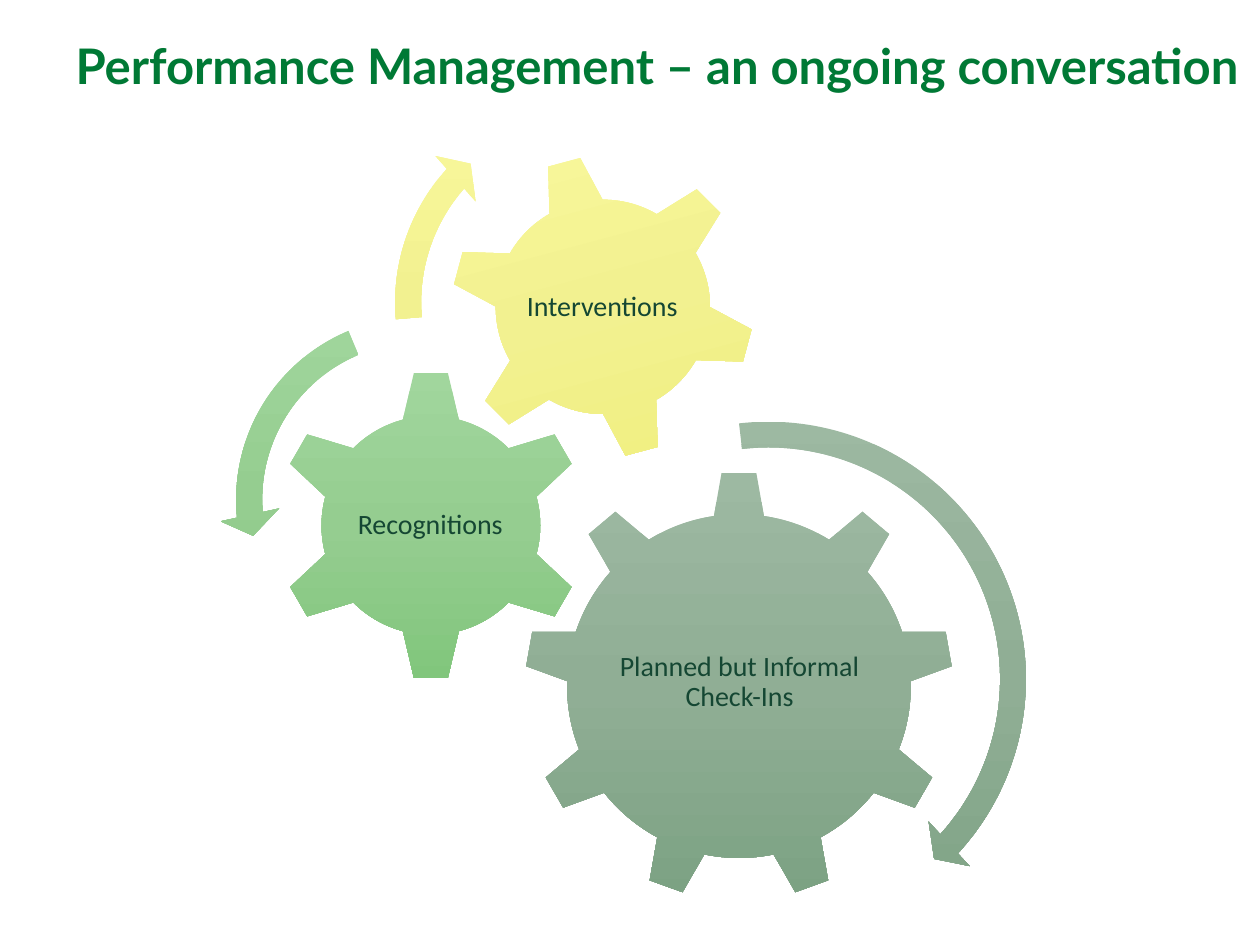
from copy import deepcopy

from pptx import Presentation
from pptx.dml.color import RGBColor
from pptx.enum import shapes, text
from pptx.util import Inches, Pt

G = shapes.MSO_SHAPE

# Content: gear square (left, top, side), label box (left, top, width, height),
# arrow square, arrow shape in percent (shaft, head) and degrees (head, end, start)
TITLE = "Performance Management – an ongoing conversation"
GEARS = [
    dict(label="Planned but Informal Check-Ins", tone="sage",
         kind=G.GEAR_9, gear=(4.16, 3.74, 3.41), turn=0,
         box=(4.85, 4.54, 2.04, 1.75),
         arrow=G.CIRCULAR_ARROW, ring=(3.92, 3.21, 4.36),
         width=(4.7, 5.5), sweep=(4.98, 42.38, 263.42)),
    dict(label="Recognitions", tone="green",
         kind=G.GEAR_6, gear=(2.18, 2.93, 2.48), turn=0,
         box=(2.8, 3.56, 1.23, 1.22),
         arrow=G.LEFT_CIRCULAR_ARROW, ring=(1.74, 2.38, 3.17),
         width=(6.5, 7.5), sweep=(7.17, 174.82, 247.3)),
    dict(label="Interventions", tone="yellow",
         kind=G.GEAR_6, gear=(3.57, 1.22, 2.43), turn=345,
         box=(4.1, 1.76, 1.36, 1.36),
         arrow=G.CIRCULAR_ARROW, ring=(3, 0.69, 3.42),
         width=(6, 7), sweep=(6.57, 221.9, 175.14)),
]

THEME = dict(
    title=dict(name="Lato", size=Pt(28), bold=True, color="007935"),
    label=dict(name="Calibri", size=Pt(16), bold=False, color="154733"),
    sage=("9DB9A2", "90AE95", "7CA283"),
    green=("A1D69D", "95CD90", "81C67C"),
    yellow=("FAF99D", "F2F190", "F0EF7C"),
)


def style(font, look):
    for key, value in look.items():
        if key == "color":
            font.color.rgb = RGBColor.from_string(value)
        else:
            setattr(font, key, value)


def write(frame, words, look, align, anchor, inset):
    frame.word_wrap = True
    frame.auto_size = text.MSO_AUTO_SIZE.NONE
    frame.vertical_anchor = anchor
    for side, gap in zip(("left", "top", "right", "bottom"), inset):
        setattr(frame, "margin_" + side, Inches(gap))
    para = frame.paragraphs[0]
    para.alignment = align
    run = para.add_run()
    run.text = words
    style(run.font, THEME[look])
    return para


def draw(slide, kind, square, tone):
    left, top, side = map(Inches, square)
    shape = slide.shapes.add_shape(kind, left, top, side, side)
    shape.shadow.inherit = False
    shape.line.fill.background()
    fill = shape.fill
    fill.gradient()
    fill.gradient_angle = 270
    # A new gradient has two stops; the middle one is a copy of the first
    first = fill.gradient_stops[0]._gs
    first.addnext(deepcopy(first))
    for stop, spot, color in zip(fill.gradient_stops, (0, 0.5, 1), THEME[tone]):
        stop.position = spot
        stop.color.rgb = RGBColor.from_string(color)
    return shape


def main():
    deck = Presentation()
    deck.slide_width, deck.slide_height = Inches(10), Inches(7.5)
    slide = deck.slides.add_slide(deck.slide_layouts[5])

    # Title
    title = slide.shapes.title
    title.left, title.top, title.width, title.height = map(
        Inches, (0.5, 0.23, 9.5, 0.57))
    write(title.text_frame, TITLE, "title", text.PP_ALIGN.LEFT,
          text.MSO_ANCHOR.TOP, (0.1, 0.05, 0.1, 0.05))

    # Gears with their labels
    for part in GEARS:
        draw(slide, part["kind"], part["gear"], part["tone"]).rotation = part["turn"]
        box = slide.shapes.add_textbox(*map(Inches, part["box"]))
        para = write(box.text_frame, part["label"], "label", text.PP_ALIGN.CENTER,
                     text.MSO_ANCHOR.MIDDLE, [0.02] * 4)
        para.line_spacing = 0.9

    # Turning arrows: one degree is 0.6 adjustment units
    for part in GEARS:
        ring = draw(slide, part["arrow"], part["ring"], part["tone"])
        shaft, head = (pct / 100 for pct in part["width"])
        angles = [deg * 0.6 for deg in part["sweep"]]
        for i, value in enumerate([shaft, *angles, head]):
            ring.adjustments[i] = value

    deck.save("out.pptx")


if __name__ == "__main__":
    main()
